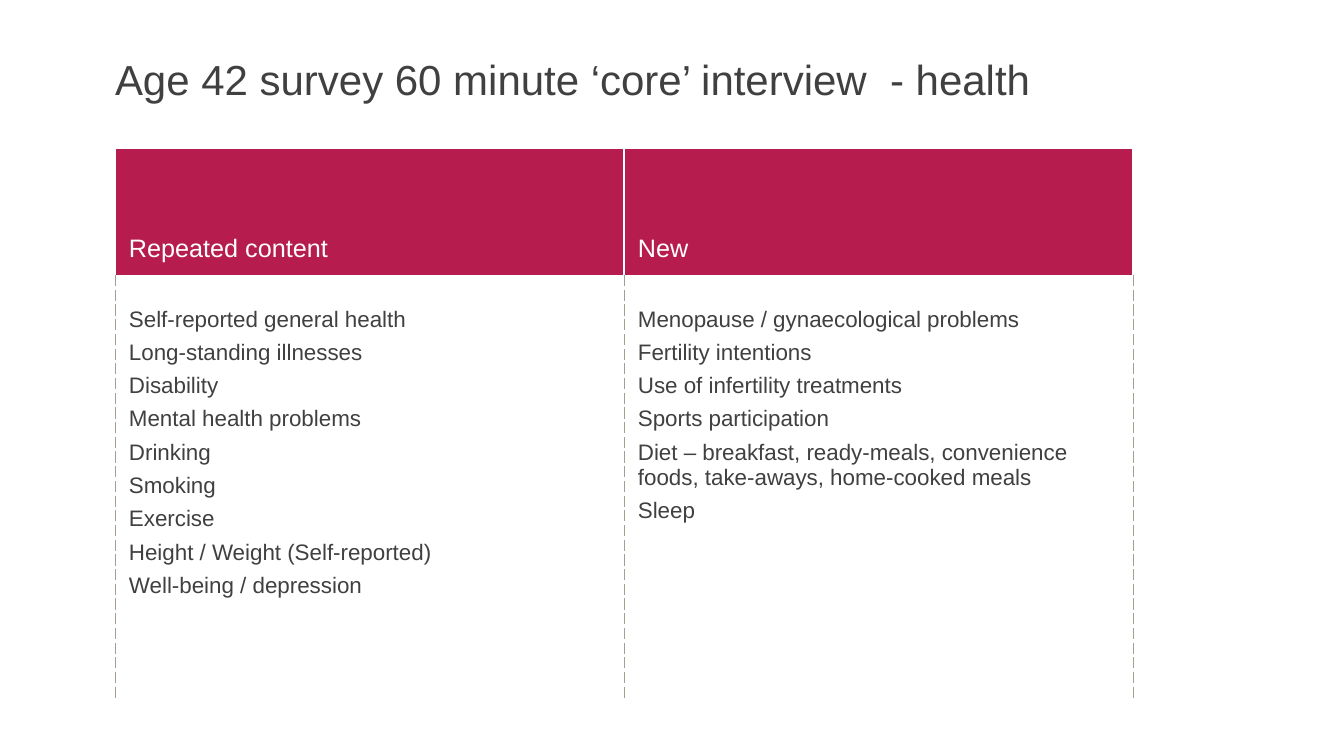
from lxml import etree
from pptx import Presentation
from pptx.dml.color import RGBColor
from pptx.enum.text import MSO_ANCHOR, PP_ALIGN
from pptx.oxml.ns import qn
from pptx.util import Pt

TOP, BOTTOM = MSO_ANCHOR.TOP, MSO_ANCHOR.BOTTOM
LEFT = PP_ALIGN.LEFT
PX = 914400 / 100.8
COLORS = {"crimson": "B61D4E", "text": "404040", "white": "FFFFFF", "rule": "A79E93"}
COLUMNS = {
    "Repeated content": [
        "Self-reported general health", "Long-standing illnesses", "Disability",
        "Mental health problems", "Drinking", "Smoking", "Exercise",
        "Height / Weight (Self-reported)", "Well-being / depression",
    ],
    "New": [
        "Menopause / gynaecological problems", "Fertility intentions",
        "Use of infertility treatments", "Sports participation",
        "Diet – breakfast, ready-meals, convenience foods, take-aways, home-cooked meals",
        "Sleep",
    ],
}


def px(length):
    return round(length * PX)


def fill_cell(cell, lines, size, color, space_after, layout, borders):
    """Write the lines, then set the margins and the four borders."""
    for name, value in layout.items():
        setattr(cell, name, value)
    frame = cell.text_frame
    frame.text = "\n".join(lines)
    for para in frame.paragraphs:
        para.space_after = Pt(space_after)
        font = para.runs[0].font
        for name, value in {"name": "Arial", "size": Pt(size), "bold": False}.items():
            setattr(font, name, value)
        font.color.rgb = RGBColor.from_string(COLORS[color])
    properties = cell._tc.get_or_add_tcPr()
    for index, (side, (line_color, width, dash)) in enumerate(borders.items()):
        line = etree.Element(qn(f"a:ln{side}"), w=str(Pt(width)))
        solid = etree.SubElement(line, qn("a:solidFill"))
        etree.SubElement(solid, qn("a:srgbClr"), val=COLORS[line_color])
        etree.SubElement(line, qn("a:prstDash"), val=dash)
        properties.insert(index, line)


deck = Presentation()
deck.slide_width, deck.slide_height = px(1344), px(756)
page = deck.slides.add_slide(deck.slide_layouts[5])

# Title
title = page.shapes.title
title.left, title.top, title.width, title.height = px(115), px(59), px(937), px(49)
frame = title.text_frame
for name, value in {"margin_left": 0, "margin_top": 0, "margin_right": 0,
                    "margin_bottom": 0, "vertical_anchor": TOP, "word_wrap": True}.items():
    setattr(frame, name, value)
frame.text = "Age 42 survey 60 minute ‘core’ interview  - health"
para = frame.paragraphs[0]
para.alignment, para.line_spacing = LEFT, 0.9
para.font.name, para.font.size = "Arial", Pt(30)
para.font.color.rgb = RGBColor.from_string(COLORS["text"])

# Table frame
table = page.shapes.add_table(2, 2, px(115), px(148), px(1018), px(550)).table
table.horz_banding = False
for column in table.columns:
    column.width = px(509)
for row, height in zip(table.rows, (129, 421)):
    row.height = px(height)

# Header and body cells
white, dashed = ("white", 1, "solid"), ("rule", 0.25, "dash")
header_borders = {"L": white, "R": white, "T": white, "B": ("white", 3, "solid")}
body_borders = {"L": dashed, "R": dashed, "T": white, "B": white}
header_layout = {"margin_left": px(14), "margin_top": px(5), "margin_right": px(14),
                 "margin_bottom": px(14), "vertical_anchor": BOTTOM}
body_layout = {"margin_left": px(14), "margin_top": px(30), "margin_right": px(10),
               "margin_bottom": px(5), "vertical_anchor": TOP}
for index, (heading, topics) in enumerate(COLUMNS.items()):
    header, body = table.cell(0, index), table.cell(1, index)
    header.fill.solid()
    header.fill.fore_color.rgb = RGBColor.from_string(COLORS["crimson"])
    body.fill.background()
    fill_cell(header, [heading], 18, "white", 0, header_layout, header_borders)
    fill_cell(body, topics, 16, "text", 6, body_layout, body_borders)

deck.save("out.pptx")
